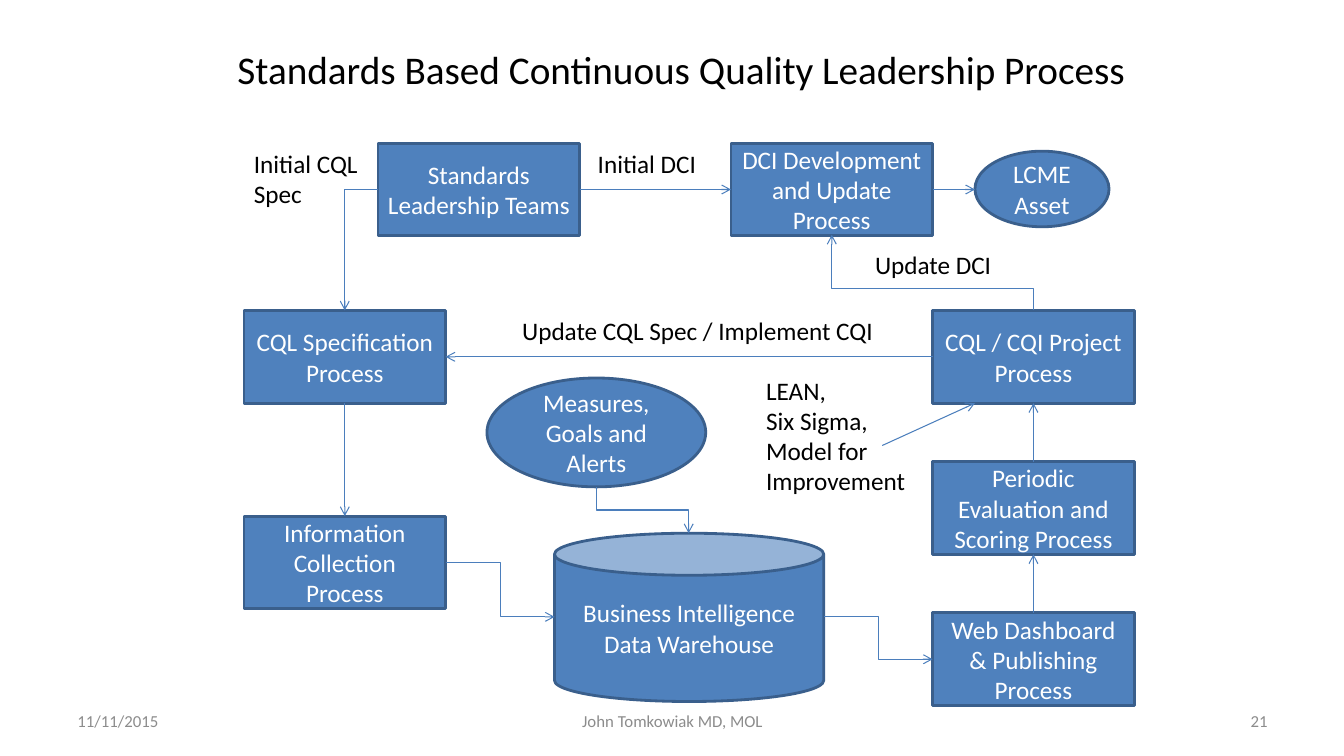
from lxml import etree
from pptx import Presentation
from pptx.dml.color import RGBColor
from pptx.enum.shapes import MSO_CONNECTOR, MSO_SHAPE
from pptx.enum.text import MSO_ANCHOR, MSO_AUTO_SIZE, PP_ALIGN
from pptx.oxml.ns import qn
from pptx.util import Inches, Pt

BLUE = RGBColor(0x4F, 0x81, 0xBD)
OUTLINE = RGBColor(0x3A, 0x5F, 0x8C)
ARROW = RGBColor(0x4B, 0x7E, 0xBC)
WHITE = RGBColor(0xFF, 0xFF, 0xFF)
BLACK = RGBColor(0, 0, 0)
GRAY = RGBColor(0x8C, 0x8C, 0x8C)
PROCESS, ELLIPSE, CAN = MSO_SHAPE.FLOWCHART_PROCESS, MSO_SHAPE.OVAL, MSO_SHAPE.CAN
STRAIGHT, ELBOW = MSO_CONNECTOR.STRAIGHT, MSO_CONNECTOR.ELBOW
LEFT_ALIGN, CENTER, RIGHT_ALIGN = PP_ALIGN.LEFT, PP_ALIGN.CENTER, PP_ALIGN.RIGHT
TOP_ANCHOR, MIDDLE = MSO_ANCHOR.TOP, MSO_ANCHOR.MIDDLE
GROW = MSO_AUTO_SIZE.SHAPE_TO_FIT_TEXT
TOP, LEFT, BOTTOM, RIGHT = range(4)

presentation = Presentation()
presentation.slide_width = Inches(13.33)
presentation.slide_height = Inches(7.5)
slide = presentation.slides.add_slide(presentation.slide_layouts[5])


def write_text(shape, lines, size, color, alignment, anchor):
    frame = shape.text_frame
    frame.word_wrap = True
    frame.vertical_anchor = anchor
    for index, line in enumerate(lines):
        paragraph = frame.add_paragraph() if index else frame.paragraphs[0]
        paragraph.alignment = alignment
        run = paragraph.add_run()
        run.text = line
        run.font.name = "Calibri"
        run.font.size = Pt(size)
        run.font.color.rgb = color


def add_arrow(kind, begin, end):
    points = [Inches(value) for value in (*begin, *end)]
    connector = slide.shapes.add_connector(kind, *points)
    connector.line.color.rgb = ARROW
    connector.line.width = Pt(0.75)
    properties = connector._element.spPr
    line = properties.find(qn("a:ln"))
    etree.SubElement(line, qn("a:tailEnd"), type="arrow")
    etree.SubElement(properties, qn("a:effectLst"))
    return connector


# Title
title = slide.shapes.title
title.left, title.top = Inches(2.17), Inches(0.25)
title.width, title.height = Inches(9.17), Inches(0.87)
write_text(title, ["Standards Based Continuous Quality Leadership Process"],
           28, BLACK, CENTER, MIDDLE)

# Process boxes, ellipses and data store
BOX = (2, 0.92)
nodes = {}
for name, kind, position, size, lines in [
    ("warehouse", CAN, (5.5, 5.29), (2.67, 1.67), ["Business Intelligence Data Warehouse"]),
    ("collection", PROCESS, (2.42, 5.12), BOX, ["Information Collection Process"]),
    ("dashboard", PROCESS, (9.25, 6.08), BOX, ["Web Dashboard & Publishing Process"]),
    ("dci", PROCESS, (7.25, 1.42), BOX, ["DCI Development and Update Process"]),
    ("specification", PROCESS, (2.42, 3.08), BOX, ["CQL Specification Process"]),
    ("evaluation", PROCESS, (9.25, 4.58), BOX, ["Periodic Evaluation and Scoring Process"]),
    ("teams", PROCESS, (3.75, 1.42), BOX, ["Standards Leadership Teams"]),
    ("project", PROCESS, (9.25, 3.08), BOX, ["CQL / CQI Project", "Process"]),
    ("measures", ELLIPSE, (4.83, 3.75), (2.17, 1.08), ["Measures, Goals and Alerts"]),
    ("asset", ELLIPSE, (9.67, 1.5), (1.33, 0.75), ["LCME Asset"]),
]:
    shape = slide.shapes.add_shape(kind, *[Inches(value) for value in position + size])
    shape.shadow.inherit = False
    shape.fill.solid()
    shape.fill.fore_color.rgb = BLUE
    shape.line.color.rgb = OUTLINE
    shape.line.width = Pt(2)
    write_text(shape, lines, 18, WHITE, CENTER, MIDDLE)
    nodes[name] = shape

# Straight arrows between boxes
for source, source_side, target, target_side, begin, end in [
    ("specification", BOTTOM, "collection", TOP, (3.42, 4), (3.42, 5.12)),
    ("project", LEFT, "specification", RIGHT, (9.25, 3.54), (4.42, 3.54)),
    ("teams", RIGHT, "dci", LEFT, (5.75, 1.88), (7.25, 1.88)),
    ("evaluation", TOP, "project", BOTTOM, (10.25, 4.58), (10.25, 4)),
    ("dashboard", TOP, "evaluation", BOTTOM, (10.25, 6.08), (10.25, 5.5)),
]:
    arrow = add_arrow(STRAIGHT, begin, end)
    arrow.begin_connect(nodes[source], source_side)
    arrow.end_connect(nodes[target], target_side)

asset_arrow = add_arrow(STRAIGHT, (9.25, 1.88), (9.67, 1.88))
asset_arrow.begin_connect(nodes["dci"], RIGHT)
add_arrow(STRAIGHT, (8.75, 4.42), (9.67, 4))

# Elbow arrows that leave sideways
add_arrow(ELBOW, (4.42, 5.58), (5.5, 6.12))
add_arrow(ELBOW, (8.17, 6.12), (9.25, 6.54))
corner = add_arrow(ELBOW, (3.75, 1.88), (3.42, 3.08))
corner._element.spPr.find(qn("a:prstGeom")).set("prst", "bentConnector2")

# Elbow arrows that leave vertically: laid out sideways, then turned by 270 degrees
for (x1, y1), (x2, y2), bend in [
    ((10.25, 3.08), (8.25, 2.33), 29500),
    ((5.92, 4.83), (6.83, 5.29), 50000),
]:
    center_x, center_y = (x1 + x2) / 2, (y1 + y2) / 2
    half_x, half_y = (x1 - x2) / 2, (y1 - y2) / 2
    elbow = add_arrow(ELBOW, (center_x - half_y, center_y + half_x),
                      (center_x + half_y, center_y - half_x))
    properties = elbow._element.spPr
    properties.find(qn("a:xfrm")).set("rot", str(270 * 60000))
    adjustments = properties.find(qn("a:prstGeom")).find(qn("a:avLst"))
    etree.SubElement(adjustments, qn("a:gd"), name="adj1", fmla=f"val {bend}")

# Arrow labels
for box, lines in [
    ((2.42, 1.42, 1.42, 0.71), ["Initial CQL Spec"]),
    ((5.08, 3.08, 3.92, 0.4), ["Update CQL Spec / Implement CQI"]),
    ((8.58, 2.42, 1.42, 0.4), ["Update DCI"]),
    ((5.83, 1.42, 1.25, 0.4), ["Initial DCI"]),
    ((7.5, 3.67, 1.67, 1.62), ["LEAN,", "Six Sigma,", "Model for Improvement"]),
]:
    label = slide.shapes.add_textbox(*[Inches(value) for value in box])
    write_text(label, lines, 18, BLACK, LEFT_ALIGN, TOP_ANCHOR)
    label.text_frame.auto_size = GROW

# Footer
for left, width, text, alignment in [
    (0.67, 3.11, "11/11/2015", LEFT_ALIGN),
    (4.56, 4.22, "John Tomkowiak MD, MOL", CENTER),
    (9.56, 3.11, "21", RIGHT_ALIGN),
]:
    footer = slide.shapes.add_textbox(Inches(left), Inches(6.95), Inches(width), Inches(0.4))
    write_text(footer, [text], 12, GRAY, alignment, MIDDLE)

presentation.save("out.pptx")
